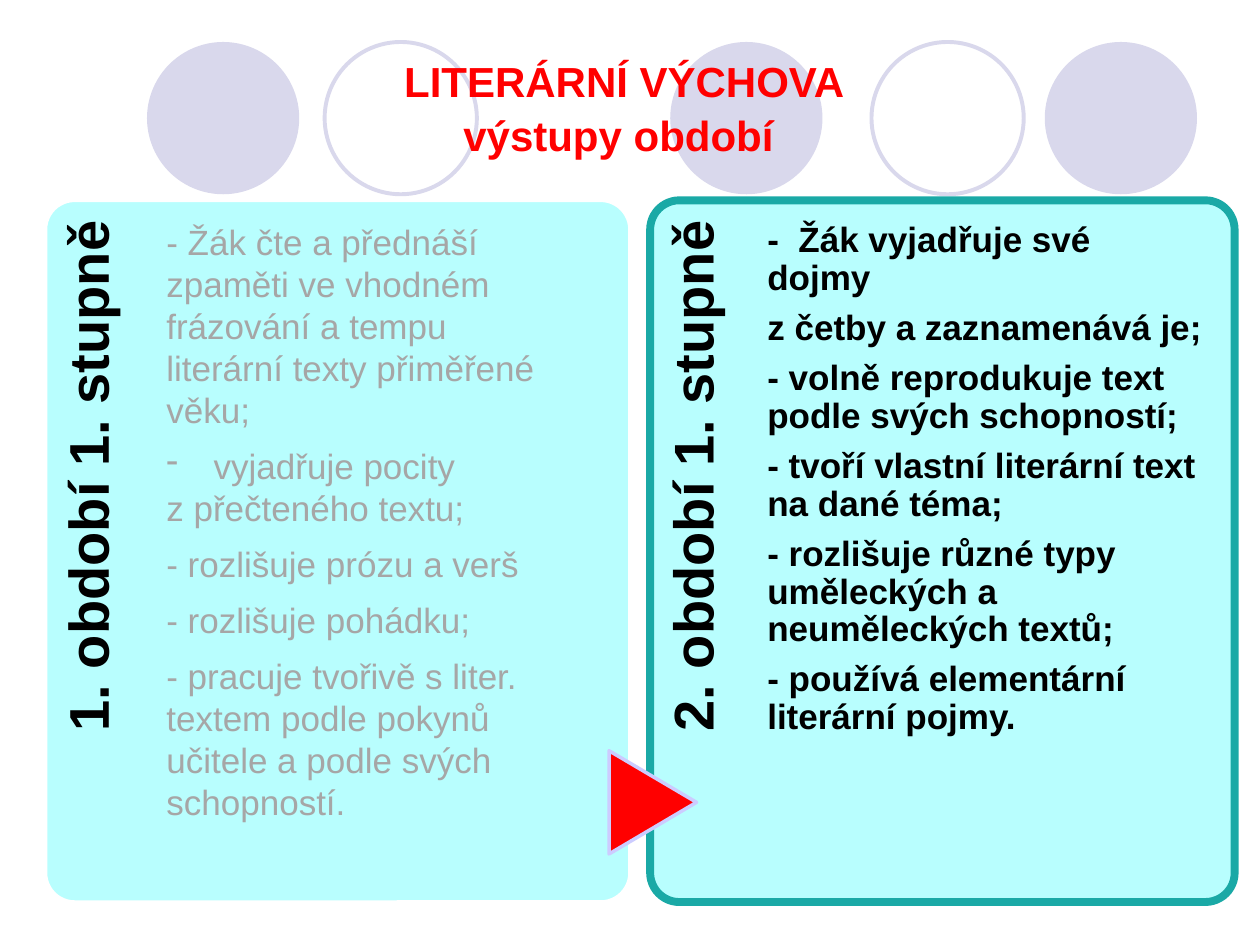
from lxml.etree import SubElement
from pptx import Presentation
from pptx.dml.color import RGBColor
from pptx.enum.shapes import MSO_SHAPE
from pptx.enum.text import PP_ALIGN
from pptx.oxml.ns import qn
from pptx.util import Pt

HUES = {
    "pale": "D9D8EC", "panel": "B8FEFE", "teal": "1AA9A6", "white": "FFFFFF",
    "red": "FF0000", "lilac": "CCCCFF", "gray": "A6A6A6", "black": "000000",
}
LEFT = [
    "- Žák čte a přednáší zpaměti ve vhodném frázování a tempu literární texty přiměřené věku;",
    "vyjadřuje pocity",
    "z přečteného textu;",
    "- rozlišuje prózu a verš",
    "- rozlišuje pohádku;",
    "- pracuje tvořivě s liter. textem podle pokynů učitele a podle svých schopností.",
]
RIGHT = [
    "-  Žák vyjadřuje své dojmy",
    "z četby a zaznamenává je;",
    "- volně reprodukuje text podle svých schopností;",
    "- tvoří vlastní literární text na dané téma;",
    "- rozlišuje různé typy uměleckých a neuměleckých textů;",
    "- používá elementární literární pojmy.",
]


def hue(name):
    return RGBColor.from_string(HUES[name])


def add_form(slide, kind, box, fill=None, line=None, width=2):
    form = slide.shapes.add_shape(kind, *map(Pt, box))
    form.shadow.inherit = False
    if fill:
        form.fill.solid()
        form.fill.fore_color.rgb = hue(fill)
    else:
        form.fill.background()
    if line:
        form.line.color.rgb = hue(line)
        form.line.width = Pt(width)
    else:
        form.line.fill.background()
    return form


def add_text(slide, box, lines, size, color, bold=True, align=PP_ALIGN.LEFT,
             inset=(7.2, 3.6, 7.2, 3.6), pitch=0.9, before=0, after=0):
    area = slide.shapes.add_textbox(*map(Pt, box))
    frame = area.text_frame
    frame.word_wrap = True
    (frame.margin_left, frame.margin_top,
     frame.margin_right, frame.margin_bottom) = map(Pt, inset)
    frame.text = "\n".join(lines)
    for para in frame.paragraphs:
        para.alignment = align
        para.line_spacing = pitch
        para.space_before = Pt(before)
        para.space_after = Pt(after)
        for run in para.runs:
            font = run.font
            font.name = "Arial"
            font.size = Pt(size)
            font.bold = bold
            font.color.rgb = hue(color)
    return area


def add_dash(para, indent):
    props = para._p.get_or_add_pPr()
    props.set("marL", str(Pt(indent)))
    props.set("indent", str(-Pt(indent)))
    SubElement(props, qn("a:buChar")).set("char", "-")
    para.space_after = Pt(0)


def add_panel(slide, left, label, line, width):
    panel = add_form(slide, MSO_SHAPE.ROUNDED_RECTANGLE,
                     (left, 114.5, 334, 401), "panel", line, width)
    panel.adjustments[0] = 0.05
    side = add_text(slide, (left - 131, 245.5, 329, 67), [label], 32, "black",
                    align=PP_ALIGN.RIGHT, inset=(0, 8.6, 11.5, 0))
    side.rotation = 270


def main():
    deck = Presentation()
    deck.slide_width, deck.slide_height = Pt(720), Pt(540)
    slide = deck.slides.add_slide(deck.slide_layouts[6])

    for left, full in ((383, True), (597, True), (84, True),
                       (498, False), (185.5, False)):
        add_form(slide, MSO_SHAPE.OVAL, (left, 24, 87, 87),
                 "pale" if full else None, None if full else "pale", 2.25)

    add_panel(slide, 26, "1. období 1. stupně", "white", 2)
    add_panel(slide, 371.5, "2. období 1. stupně", "teal", 4.5)
    arrow = add_form(slide, MSO_SHAPE.FLOWCHART_EXTRACT,
                     (343.5, 433.5, 59, 50), "red", "lilac")
    arrow.rotation = 90

    add_text(slide, (438.5, 114.5, 249, 401), RIGHT, 20, "black",
             inset=(0, 12.6, 0, 0), after=7)
    tasks = add_text(slide, (88, 122.5, 238, 355), LEFT, 20, "gray",
                     bold=False, pitch=1, after=8)
    add_dash(tasks.text_frame.paragraphs[1], 27)
    add_text(slide, (101.5, 31.5, 510.5, 65.5),
             ["LITERÁRNÍ VÝCHOVA", "výstupy období "], 24, "red",
             align=PP_ALIGN.CENTER, before=4.8)

    deck.save("out.pptx")


if __name__ == "__main__":
    main()
